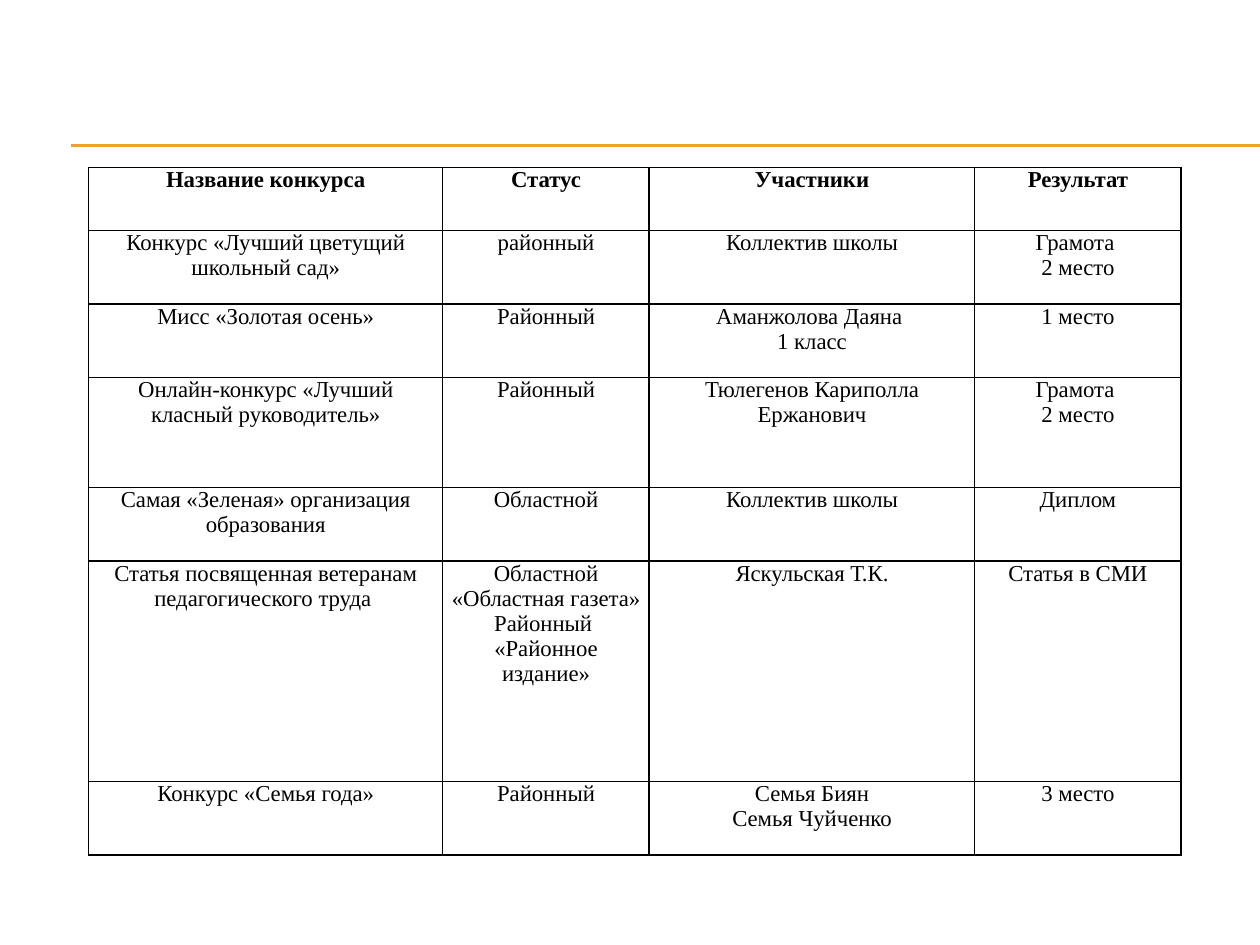
import pptx
import pptx.util
import pptx.dml.color
import pptx.enum.shapes
import pptx.enum.text
import pptx.oxml
import pptx.oxml.ns

Pt = pptx.util.Pt
RGB = pptx.dml.color.RGBColor.from_string
qn = pptx.oxml.ns.qn

# Content: each row lists its cells, each line break starts a paragraph
head = ["Название конкурса", "Статус", "Участники", "Результат"]
body = [
    ["Конкурс «Лучший цветущий школьный сад»", "районный",
     "Коллектив школы", "Грамота \n2 место"],
    ["Мисс «Золотая осень»", "Районный",
     "Аманжолова Даяна \n1 класс", "1 место"],
    ["Онлайн-конкурс «Лучший класный руководитель»", "Районный",
     "Тюлегенов Кариполла Ержанович", "Грамота \n2 место"],
    ["Самая «Зеленая» организация образования", "Областной",
     "Коллектив школы", "Диплом"],
    ["Статья посвященная ветеранам педагогического труда ",
     "Областной «Областная газета»\nРайонный \n«Районное издание»",
     "Яскульская Т.К.", "Статья в СМИ"],
    ["Конкурс «Семья года»", "Районный",
     "Семья Биян\nСемья Чуйченко", "3 место"],
]

# Theme and layout, in points
theme = {"font": "Times New Roman", "size": 13, "ink": "000000",
         "rule": "F0A22E", "page": "FFFFFF", "edge": 1, "thin": 0.75}
page_w, page_h = 720, 540
rule_x, rule_ys = 40.5, (82.8, 83.5)
left, top, pad = 50.5, 95.75, 5
widths = [202.5, 118, 186, 118]
heights = [36, 42, 42, 63, 42, 126, 42]


def add_rule(slide, y):
    line = slide.shapes.add_connector(
        pptx.enum.shapes.MSO_CONNECTOR.STRAIGHT,
        Pt(rule_x), Pt(y), Pt(page_w), Pt(y))
    line.line.color.rgb = RGB(theme["rule"])
    line.line.width = Pt(theme["thin"])
    line._element.spPr.append(pptx.oxml.parse_xml(
        f'<a:effectLst {pptx.oxml.ns.nsdecls("a")}/>'))


def add_edges(cell):
    props = cell._tc.get_or_add_tcPr()
    for spot, side in enumerate(("lnL", "lnR", "lnT", "lnB")):
        props.insert(spot, pptx.oxml.parse_xml(
            f'<a:{side} {pptx.oxml.ns.nsdecls("a")} w="{Pt(theme["edge"])}">'
            f'<a:solidFill><a:srgbClr val="{theme["ink"]}"/></a:solidFill>'
            f'</a:{side}>'))


def fill_cell(cell, text, bold):
    cell.margin_left = cell.margin_right = Pt(pad)
    cell.margin_top = cell.margin_bottom = 0
    cell.fill.background()
    add_edges(cell)
    frame = cell.text_frame
    for i, part in enumerate(text.split("\n")):
        para = frame.add_paragraph() if i else frame.paragraphs[0]
        para.alignment = pptx.enum.text.PP_ALIGN.CENTER
        run = para.add_run()
        run.text = part
        run.font.name = theme["font"]
        run.font.size = Pt(theme["size"])
        run.font.bold = bold
        run.font.color.rgb = RGB(theme["ink"])


def main():
    deck = pptx.Presentation()
    deck.slide_width, deck.slide_height = Pt(page_w), Pt(page_h)
    slide = deck.slides.add_slide(deck.slide_layouts[6])
    slide.background.fill.solid()
    slide.background.fill.fore_color.rgb = RGB(theme["page"])

    # Double rule under the top margin
    for y in rule_ys:
        add_rule(slide, y)

    # Contest table
    rows = [head] + body
    table = slide.shapes.add_table(
        len(rows), len(head), Pt(left), Pt(top),
        Pt(sum(widths)), Pt(sum(heights))).table
    table.horz_banding = False
    for col, width in zip(table.columns, widths):
        col.width = Pt(width)
    for r, (row, height) in enumerate(zip(rows, heights)):
        table.rows[r].height = Pt(height)
        for c, text in enumerate(row):
            fill_cell(table.cell(r, c), text, bold=r == 0)

    deck.save("out.pptx")


if __name__ == "__main__":
    main()
